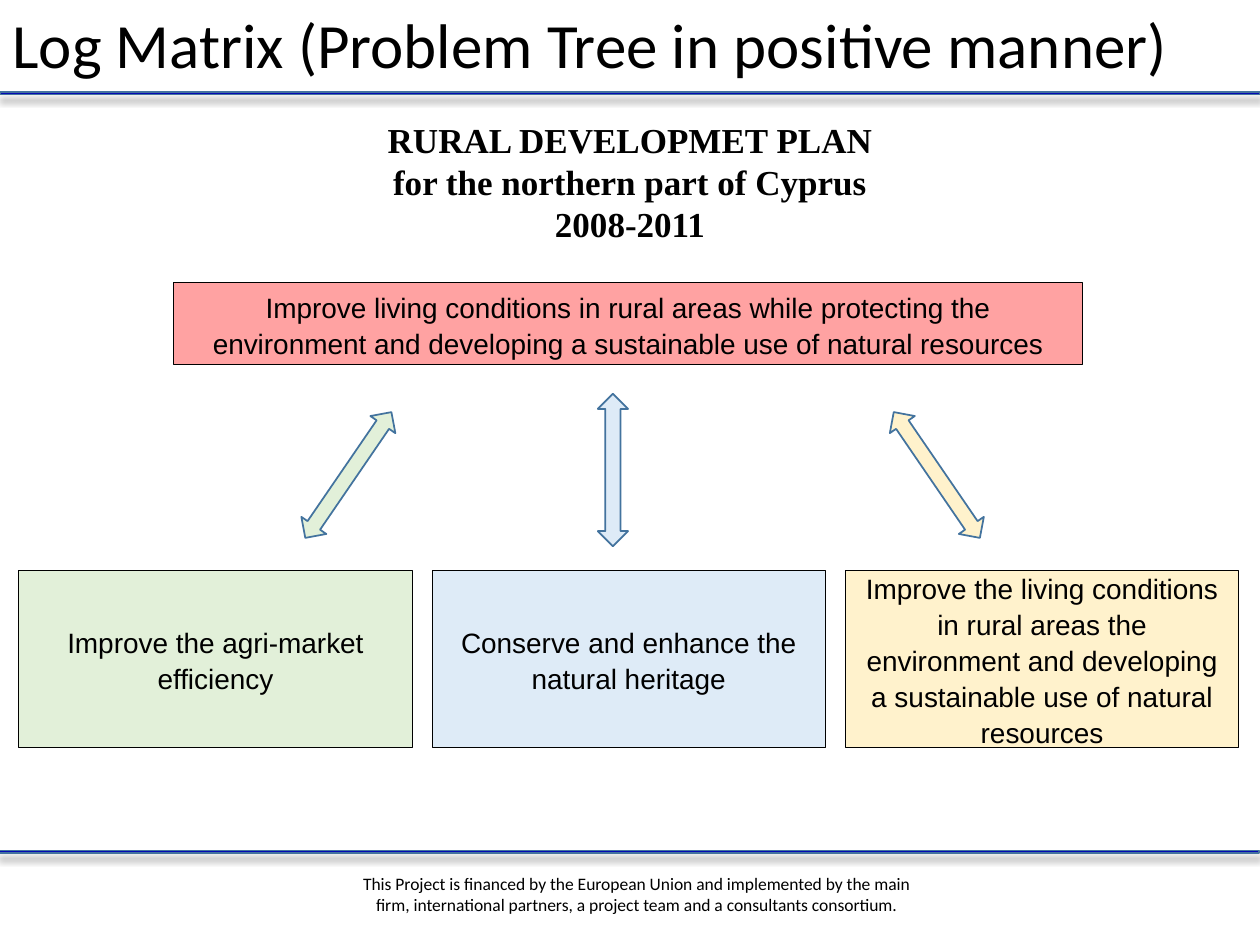
from dataclasses import dataclass

from lxml.etree import SubElement
from pptx import Presentation
from pptx.dml.color import RGBColor
from pptx.enum.shapes import MSO_SHAPE
from pptx.enum.text import MSO_ANCHOR, PP_ALIGN
from pptx.oxml.ns import qn
from pptx.util import Inches, Pt


@dataclass(frozen=True)
class Theme:
    ink: str = "000000"
    rule: str = "0408B4"
    outline: str = "43739E"
    goal: str = "FF5050"
    market: str = "E2F0D9"
    heritage: str = "DEEBF7"
    living: str = "FFF2CC"
    title_size: int = 36
    heading_size: int = 20
    body_size: int = 16
    footer_size: int = 10


THEME = Theme()


def write(shape, text, font, size, align=PP_ALIGN.CENTER, anchor=MSO_ANCHOR.TOP,
          line_spacing=1.0, bold=False):
    frame = shape.text_frame
    frame.word_wrap = True
    frame.vertical_anchor = anchor
    frame.text = text
    for paragraph in frame.paragraphs:
        paragraph.alignment = align
        paragraph.line_spacing = line_spacing
        for run in paragraph.runs:
            run.font.name = font
            run.font.size = Pt(size)
            run.font.bold = bold
            run.font.color.rgb = RGBColor.from_string(THEME.ink)


def add_label(slide, box, text, font, size, **style):
    label = slide.shapes.add_textbox(*map(Inches, box))
    write(label, text, font, size, **style)


def add_figure(slide, kind, box, fill, outline, weight):
    figure = slide.shapes.add_shape(kind, *map(Inches, box))
    figure.shadow.inherit = False
    figure.fill.solid()
    figure.fill.fore_color.rgb = RGBColor.from_string(fill)
    figure.line.color.rgb = RGBColor.from_string(outline)
    figure.line.width = Pt(weight)
    return figure


def add_rule(slide, left, top):
    rule = add_figure(slide, MSO_SHAPE.RECTANGLE, (left, top, 10, 0.02),
                      THEME.rule, THEME.outline, 1)
    effects = rule._element.spPr.find(qn("a:effectLst"))
    shadow = SubElement(effects, qn("a:outerShdw"), blurRad=str(Pt(4)),
                        dist=str(Pt(3)), dir="5400000", algn="t", rotWithShape="0")
    color = SubElement(shadow, qn("a:prstClr"), val="black")
    SubElement(color, qn("a:alpha"), val="40000")


def add_objective(slide, box, text, fill, anchor=MSO_ANCHOR.MIDDLE):
    objective = add_figure(slide, MSO_SHAPE.RECTANGLE, box, fill, THEME.ink, 0.5)
    write(objective, text, "Arial", THEME.body_size, anchor=anchor, line_spacing=1.07)
    return objective


def add_arrow(slide, left, top, rotation, fill):
    arrow = add_figure(slide, MSO_SHAPE.LEFT_RIGHT_ARROW, (left, top, 1.21, 0.24),
                       fill, THEME.outline, 1)
    arrow.rotation = rotation


def main():
    prs = Presentation()
    prs.slide_width, prs.slide_height = Inches(10), Inches(7.5)
    slide = prs.slides.add_slide(prs.slide_layouts[6])

    # Footer and rules
    add_label(slide, (2.64, 6.88, 4.82, 0.44),
              "This Project is financed by the European Union and implemented by "
              "the main firm, international partners, a project team and a consultants "
              "consortium.", "Calibri", THEME.footer_size)
    add_rule(slide, -0.01, 6.75)
    add_rule(slide, 0, 0.73)

    # Title and plan heading
    add_label(slide, (0, 0, 10, 0.7), "Log Matrix (Problem Tree in positive manner)",
              "Calibri", THEME.title_size, align=PP_ALIGN.LEFT,
              anchor=MSO_ANCHOR.BOTTOM, line_spacing=0.9)
    add_label(slide, (0, 0.89, 10, 1.11),
              "RURAL DEVELOPMET PLAN\nfor the northern part of Cyprus\n2008-2011",
              "Times New Roman", THEME.heading_size, bold=True)

    # Overall goal, with a translucent fill
    goal = add_objective(slide, (1.38, 2.24, 7.21, 0.65),
                         "Improve living conditions in rural areas while protecting the "
                         "environment and developing a sustainable use of natural "
                         "resources", THEME.goal, MSO_ANCHOR.TOP)
    goal_color = goal._element.spPr.find(qn("a:solidFill"))[0]
    SubElement(goal_color, qn("a:alpha"), val="53000")

    # Objectives, each joined to the goal by an arrow: left, top, rotation
    objectives = [
        ("Improve the agri-market efficiency", THEME.market, (2.16, 3.65, 304.4)),
        ("Conserve and enhance the natural heritage", THEME.heritage, (4.26, 3.61, 270)),
        ("Improve the living conditions in rural areas the environment and developing "
         "a sustainable use of natural resources", THEME.living, (6.83, 3.65, 55.6)),
    ]
    for column, (text, fill, arrow) in enumerate(objectives):
        add_objective(slide, (0.15 + 3.28 * column, 4.53, 3.12, 1.4), text, fill)
        add_arrow(slide, *arrow, fill)

    prs.save("out.pptx")


if __name__ == "__main__":
    main()
